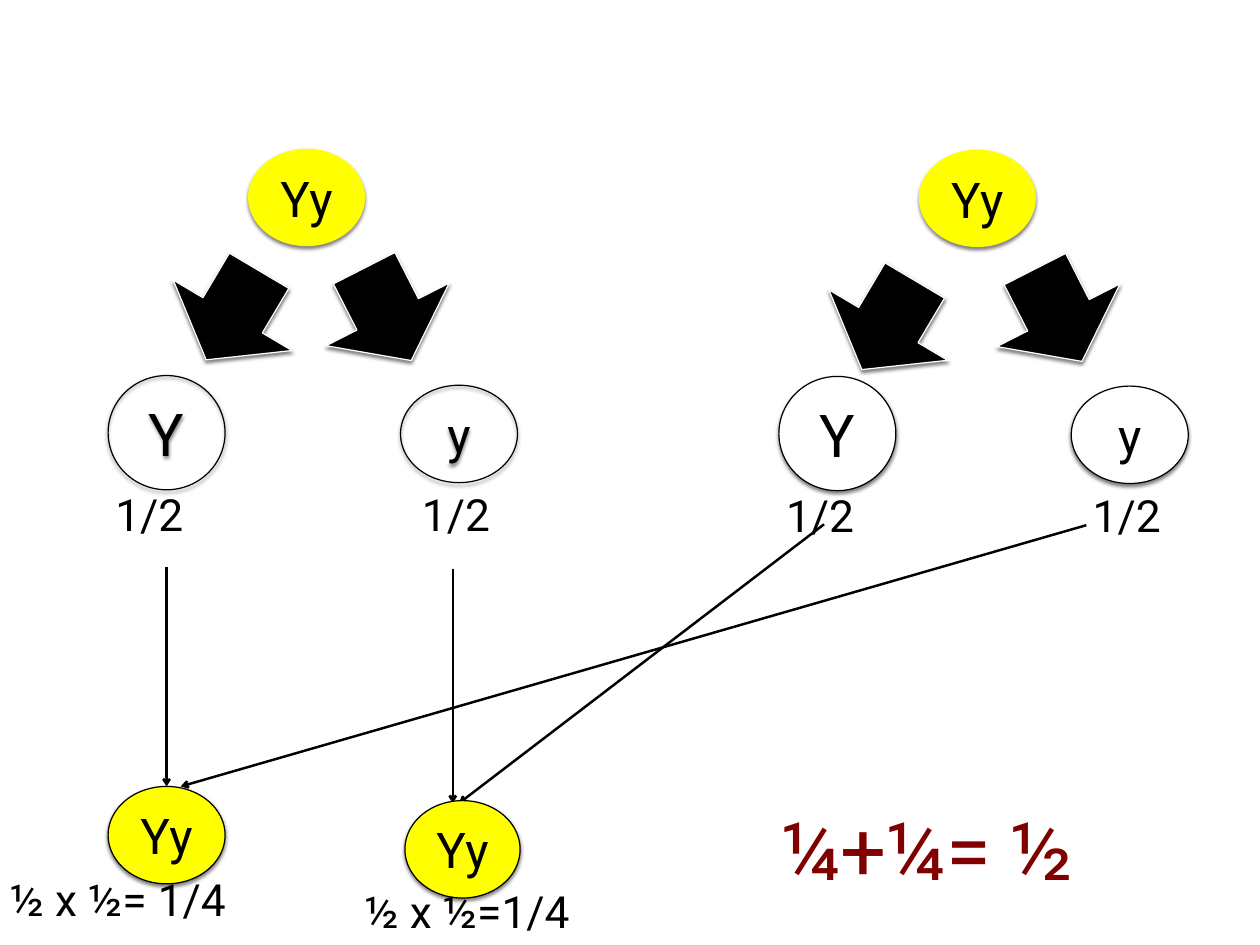
from lxml import etree
from pptx import Presentation
from pptx.dml.color import RGBColor
from pptx.enum.shapes import MSO_CONNECTOR, MSO_SHAPE
from pptx.enum.text import MSO_ANCHOR, PP_ALIGN
from pptx.oxml import parse_xml
from pptx.oxml.ns import nsdecls, qn
from pptx.util import Pt

PX = 9144
FONT = "Roboto"
COLORS = {"black": "000000", "white": "FFFFFF", "yellow": "FFFF00", "maroon": "800000"}
OVAL, BLOCK_ARROW = MSO_SHAPE.OVAL, MSO_SHAPE.RIGHT_ARROW
STRAIGHT = MSO_CONNECTOR.STRAIGHT
MIDDLE = MSO_ANCHOR.MIDDLE
CENTER, RIGHT = PP_ALIGN.CENTER, PP_ALIGN.RIGHT
TOP_SITE = 0
INSET = 6


def rgb(name):
    """Return a named colour."""
    return RGBColor.from_string(COLORS[name])


def emu(*lengths):
    """Turn px lengths into EMU."""
    return [length * PX for length in lengths]


def add_shadow(shape):
    """Give a shape a soft shadow straight below it."""
    shape.shadow.inherit = False
    effects = shape._element.spPr.find(qn("a:effectLst"))
    effects.append(parse_xml(
        f'<a:outerShdw {nsdecls("a")} blurRad="{Pt(3)}" dist="{Pt(2)}" dir="5400000" '
        f'rotWithShape="0"><a:srgbClr val="{COLORS["black"]}"><a:alpha val="50000"/>'
        '</a:srgbClr></a:outerShdw>'))


def write(shape, text, size, align, color="black", wrap=True):
    """Put one formatted paragraph into a shape."""
    frame = shape.text_frame
    frame.word_wrap = wrap
    frame.vertical_anchor = MIDDLE
    frame.margin_left = frame.margin_right = INSET * PX
    frame.margin_top = frame.margin_bottom = INSET * PX
    para = frame.paragraphs[0]
    para.text = text
    para.alignment = align
    para.font.size = Pt(size)
    para.font.name = FONT
    para.font.color.rgb = rgb(color)


def add_shape(slide, kind, box, fill=None, line=None):
    """Add a shadowed shape with optional fill and thin outline."""
    shape = slide.shapes.add_shape(kind, *emu(*box))
    add_shadow(shape)
    if fill:
        shape.fill.solid()
        shape.fill.fore_color.rgb = rgb(fill)
    else:
        shape.fill.background()
    if line:
        shape.line.color.rgb = rgb(line)
        shape.line.width = Pt(1)
    else:
        shape.line.fill.background()
    return shape


def add_genotype(slide, text, box, fill=None, line=None, size=40):
    """Add an oval that holds allele letters."""
    oval = add_shape(slide, OVAL, box, fill, line)
    write(oval, text, size, CENTER)
    return oval


def add_label(slide, text, box, size=36, color="black"):
    """Add a right-aligned line of text."""
    label = slide.shapes.add_textbox(*emu(*box))
    write(label, text, size, RIGHT, color, wrap=False)


def add_arrow(slide, start, end):
    """Add a thin black arrow between two points."""
    arrow = slide.shapes.add_connector(STRAIGHT, *emu(*start, *end))
    arrow.line.color.rgb = rgb("black")
    arrow.line.width = Pt(2)
    etree.SubElement(arrow.line._get_or_add_ln(), qn("a:tailEnd"), type="arrow")
    etree.SubElement(arrow._element.spPr, qn("a:effectLst"))
    return arrow


def add_parent(slide, left, top, left_arrow, gamete_fill=None):
    """Draw a parent, its two gametes and their chances."""
    add_genotype(slide, "Yy", (left + 162, top, 132, 110), "yellow")
    add_genotype(slide, "Y", (left + 4, top + 256, 132, 129), gamete_fill, "black", 48)
    add_genotype(slide, "y", (left + 334, top + 267, 132, 110), gamete_fill, "black")
    for (dx, dy), angle in (((261, 109), 63), (left_arrow, 120.7)):
        block = add_shape(slide, BLOCK_ARROW, (left + dx, top + dy, 117, 156), "black", "white")
        block.rotation = angle
    for dx in (0, 346):
        add_label(slide, "1/2", (left + dx, top + 376, 95, 72))


def add_child(slide, box, arrows, product, product_box):
    """Draw a child under its two arrows, with its chance below."""
    connectors = [add_arrow(slide, start, end) for start, end in arrows]
    child = add_genotype(slide, "Yy", box, "yellow", "black")
    add_label(slide, product, product_box)
    return connectors, child


def main():
    """Build the cross diagram."""
    deck = Presentation()
    deck.slide_width, deck.slide_height = emu(1422, 1067)
    slide = deck.slides.add_slide(deck.slide_layouts[6])
    add_parent(slide, 118, 168, left_arrow=(86, 110))
    add_parent(slide, 875, 169, left_arrow=(69, 120), gamete_fill="white")
    connectors, child = add_child(
        slide, (122, 888, 132, 110),
        [((188, 640), (188, 888)), ((1226, 593), (204, 888))],
        "½ x ½= 1/4", (0, 979, 261, 72))
    connectors[0].end_connect(child, TOP_SITE)
    add_child(
        slide, (457, 904, 130, 110),
        [((511, 642), (511, 907)), ((930, 592), (518, 907))],
        "½ x ½=1/4", (373, 992, 276, 72))
    add_label(slide, "¼+¼= ½", (802, 898, 416, 120), 66, "maroon")
    deck.save("out.pptx")


if __name__ == "__main__":
    main()
